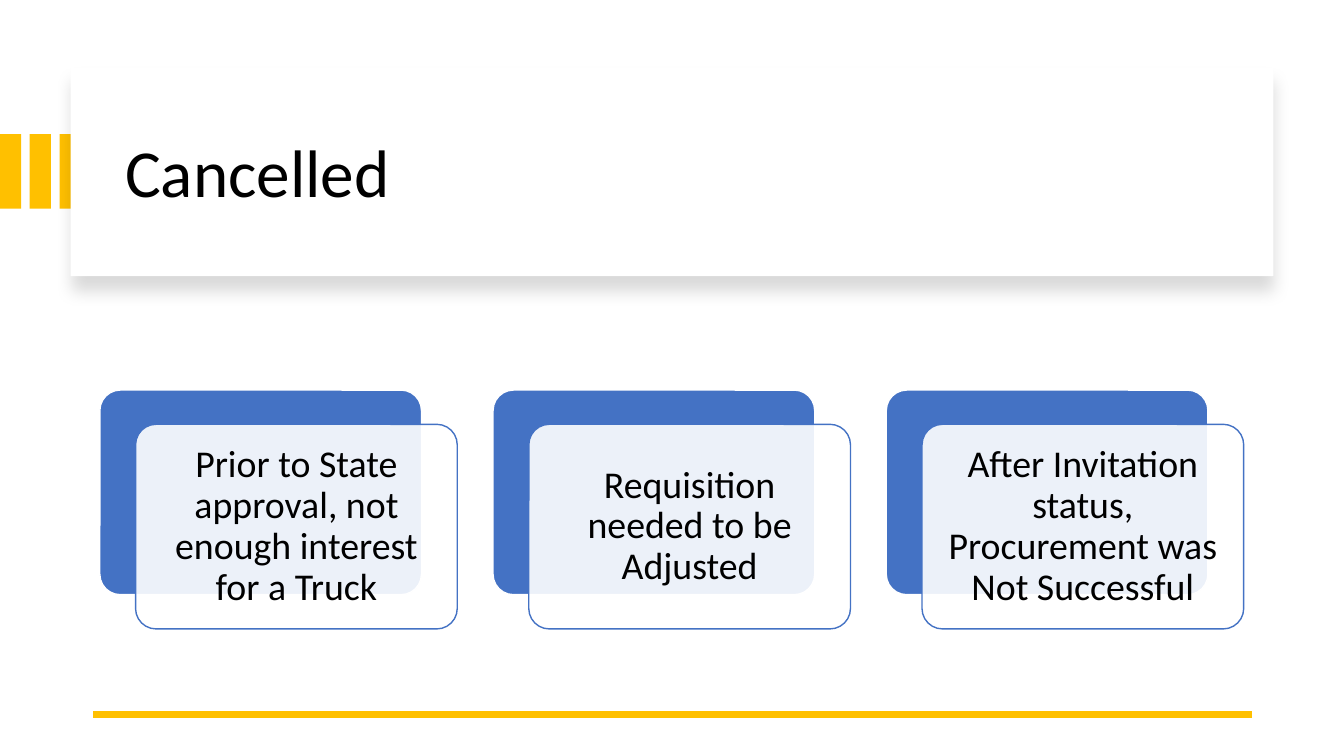
from lxml import etree
from pptx import Presentation
from pptx.dml.color import RGBColor
from pptx.enum.shapes import MSO_CONNECTOR as Link, MSO_SHAPE as Shape
from pptx.enum.text import MSO_ANCHOR as Anchor, PP_ALIGN as Align
from pptx.oxml import parse_xml
from pptx.oxml.ns import nsdecls, qn
from pptx.util import Inches, Pt

GOLD, BLUE, WHITE, BLACK = "FFC000", "4472C4", "FFFFFF", "000000"


def color(code):
    return RGBColor.from_string(code)


def block(kind, left, top, width, height, fill, edge=None):
    """Add a filled shape without shadow, outlined only if edge is given."""
    shape = slide.shapes.add_shape(
        kind, Inches(left), Inches(top), Inches(width), Inches(height))
    shape.shadow.inherit = False
    shape.fill.solid()
    shape.fill.fore_color.rgb = color(fill)
    if edge:
        shape.line.color.rgb = color(edge)
        shape.line.width = Pt(1)
    else:
        shape.line.fill.background()
    return shape


deck = Presentation()
deck.slide_width, deck.slide_height = Inches(13.33), Inches(7.5)
slide = deck.slides.add_slide(deck.slide_layouts[5])

# Gold bars, partly behind the title panel
for i in range(3):
    block(Shape.RECTANGLE, i * 0.295, 1.33, 0.21, 0.74, GOLD)

# Title panel with a soft shadow below
panel = block(Shape.RECTANGLE, 0.7, 0.67, 11.93, 2.07, WHITE)
glow = panel._element.spPr.find(qn("a:effectLst"))
glow.append(parse_xml(
    f'<a:outerShdw {nsdecls("a")} blurRad="{Pt(11)}" dist="{Pt(10)}" '
    'dir="5400000" algn="t" rotWithShape="0"><a:srgbClr val="000000">'
    '<a:alpha val="15000"/></a:srgbClr></a:outerShdw>'))

# Title, brought in front of the panel
title = slide.shapes.title
title.left, title.top = Inches(1.14), Inches(0.89)
title.width, title.height = Inches(11.13), Inches(1.7)
panel._element.addnext(title._element)
frame = title.text_frame
frame.text = "Cancelled"
frame.vertical_anchor = Anchor.MIDDLE
head = frame.paragraphs[0]
head.alignment = Align.LEFT
head.line_spacing = 0.9
head.font.name, head.font.size = "Calibri", Pt(48)
head.font.color.rgb = color(BLACK)

# Rule at the foot
rule = slide.shapes.add_connector(
    Link.STRAIGHT, Inches(12.42), Inches(7.09), Inches(0.92), Inches(7.09))
rule.line.color.rgb = color(GOLD)
rule.line.width = Pt(4.5)
etree.SubElement(rule._element.spPr, qn("a:effectLst"))

# Reasons: a see-through card over a blue one
reasons = [
    "Prior to State approval, not enough interest for a Truck",
    "Requisition needed to be Adjusted",
    "After Invitation status, Procurement was Not Successful",
]
for i, reason in enumerate(reasons):
    left = 0.99 + i * 3.9
    back = block(Shape.ROUNDED_RECTANGLE, left, 3.87, 3.19, 2.03, BLUE, WHITE)
    card = block(Shape.ROUNDED_RECTANGLE, left + 0.355, 4.21, 3.19, 2.03,
                 WHITE, BLUE)
    back.adjustments[0] = card.adjustments[0] = 0.1
    tint = card._element.spPr.find(qn("a:solidFill"))[0]
    etree.SubElement(tint, qn("a:alpha"), val="90000")

    frame = card.text_frame
    frame.text = reason
    frame.word_wrap = True
    frame.vertical_anchor = Anchor.MIDDLE
    frame.margin_left = frame.margin_right = Inches(0.11)
    frame.margin_top = frame.margin_bottom = Inches(0.11)
    para = frame.paragraphs[0]
    para.alignment = Align.CENTER
    para.line_spacing = 0.9
    para.font.name, para.font.size = "Calibri", Pt(27)
    para.font.color.rgb = color(BLACK)

deck.save("out.pptx")
